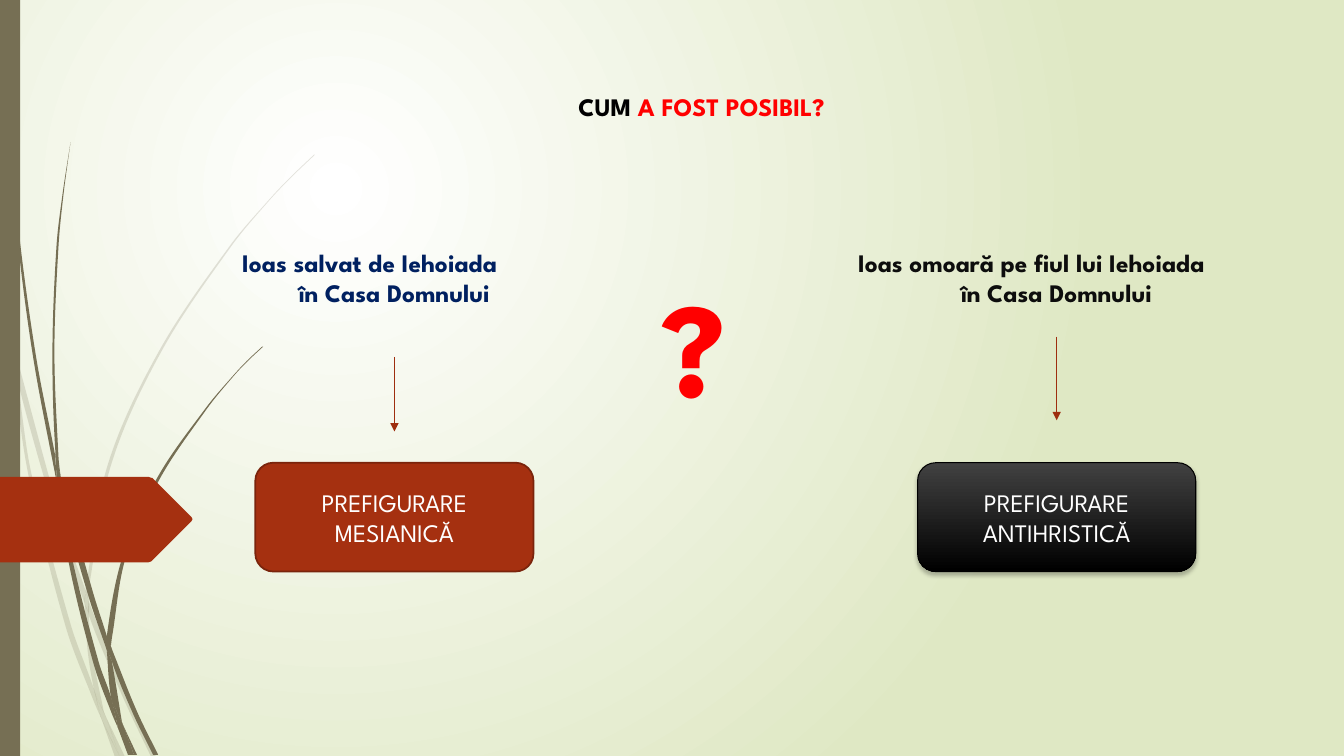
from dataclasses import dataclass
from math import dist
from lxml import etree
from pptx import Presentation
from pptx.dml.color import RGBColor
from pptx.enum.shapes import MSO_CONNECTOR, MSO_SHAPE
from pptx.enum.text import MSO_ANCHOR, MSO_AUTO_SIZE, PP_ALIGN
from pptx.oxml.ns import qn
from pptx.util import Inches, Pt


@dataclass(frozen=True)
class Theme:
    font: str = "League Spartan"
    text_size: int = 18
    mark_size: int = 96
    black: str = "000000"
    white: str = "FFFFFF"
    ink: str = "0D0D0D"
    navy: str = "002060"
    red: str = "FF0000"
    rust: str = "A53010"
    rust_edge: str = "7A240C"
    arrow: str = "9E2E0F"
    charcoal: str = "414141"
    olive: str = "766F54"
    meadow: str = "DFE8C4"


THEME = Theme()
CELL = Inches(0.1)  # the grid: one column or row is a tenth of an inch
COLUMNS, ROWS = 133.33, 75
BOX_SIZE = (27.6, 10.8)
BOX_TOP = 45.9
CENTRES = (39.13, 104.83)  # middle of the left and right halves

# Grass pieces: a downward and an upward edge each, in columns and rows
PALE_GRASS = [
    ([(0, 29.9), (1, 34.4), (1.1, 35)], [(0.9, 32.2), (0, 28.2)]),
    ([(1.4, 34.5), (1.7, 37.6), (5.8, 52.2), (8.4, 59.9)], [(8.5, 58.6), (6.2, 52), (1.4, 34.5)]),
    ([(8.8, 59.6), (8.8, 61), (12.3, 69.4), (15, 75.1)],
     [(15.5, 75.1), (12.7, 69.2), (9.2, 60.7), (8.8, 59.6)]),
    ([(10.5, 71.1), (11.9, 75.1)], [(12.4, 75.1), (10.5, 71.1)]),
    ([(1.1, 35), (2.8, 47), (6.5, 62.1), (9.2, 69.3), (10.1, 71.4)],
     [(9.9, 70.7), (9.3, 68.3), (7, 61.9), (3.1, 46.9), (1.7, 37.6), (1.1, 35)]),
    ([(8.4, 59.9), (8.7, 64.6), (9.3, 68.3), (9.6, 69.2), (10.5, 71.1)],
     [(10.3, 70.6), (9.1, 64.6), (8.8, 61), (8.8, 60.8), (8.4, 59.9)]),
    ([(31.2, 15.3), (28.9, 17.5), (26.8, 19.7), (22.8, 24.4), (15.8, 34.8), (10.7, 46.1),
      (8.5, 58.4), (8.5, 58.6), (8.8, 59.6)],
     [(8.8, 58.4), (11, 46.2), (16, 34.9), (22.9, 24.5), (26.8, 19.8), (29, 17.5), (31.2, 15.4)]),
    ([(10.1, 71.4), (11.4, 75.1)], [(11.9, 75.1), (10.1, 71.4)]),
    ([(8.5, 58.6), (8.4, 59.9), (8.8, 60.8)], [(8.8, 61), (8.8, 59.6), (8.5, 58.6)]),
    ([(9.3, 68.3), (9.9, 70.7), (10.1, 71.4), (11.9, 75.1)],
     [(11.9, 75.1), (10.5, 71.1), (9.6, 69.2), (9.3, 68.3)]),
]
DARK_GRASS = [
    ([(0.3, 0), (0.4, 4.8), (0.7, 11), (1.7, 23.3), (3.3, 35.5), (5.6, 47.7), (5.7, 48.1)],
     [(5.5, 45.7), (5.5, 45.3), (3.6, 35.5), (1.9, 23.2), (0.8, 10.9), (0.5, 4.8), (0.4, 0)]),
    ([(6, 47.2), (6.4, 50.5), (8.8, 59.2), (10.6, 64.5)],
     [(10.6, 63.3), (10.6, 63.1), (9.3, 59), (6, 47.2)]),
    ([(11, 64.1), (11.1, 65.6), (13.2, 70.8), (15.2, 74.9)],
     [(15.7, 74.9), (13.6, 70.6), (11.3, 64.9), (11, 64.1)]),
    ([(5.7, 47.7), (6.8, 55.7), (9.3, 65.9), (11.1, 70.8), (11.7, 72.2)],
     [(11.6, 71.7), (11, 69.1), (9.8, 65.7), (7.2, 55.6), (6.4, 50.5), (5.7, 47.7)]),
    ([(7, 14.1), (6.2, 19.3), (5.6, 24.5), (5.2, 34.9), (5.5, 44.9), (6, 47.2)],
     [(6, 47.2), (5.8, 45.3), (5.4, 34.9), (5.8, 24.5), (6.3, 19.3), (7, 14.1)]),
    ([(12.2, 71.9), (13.3, 74.9)], [(13.6, 74.9), (12.2, 71.9)]),
    ([(5.5, 44.9), (5.5, 45.3), (5.7, 47.7), (6.4, 50.5)], [(6, 47.2), (5.5, 44.9)]),
    ([(26, 34.4), (24.5, 35.8), (23.1, 37.3), (20.4, 40.5), (15.6, 47.4), (12.2, 55.1),
      (10.6, 63.1), (11, 64.1)],
     [(11.1, 63.3), (12.5, 55.2), (15.8, 47.6), (20.5, 40.6), (23.1, 37.4), (24.5, 35.9),
      (26.1, 34.4)]),
    ([(11.7, 72.2), (12.7, 74.9)], [(13.1, 74.9), (11.7, 72.2)]),
    ([(10.6, 64.5), (11, 69.1), (11.6, 70.6), (12.2, 71.9)],
     [(12.1, 71.6), (11.1, 65.6), (10.9, 65.1), (10.6, 64.5)]),
    ([(10.6, 63.1), (10.6, 64.5), (10.9, 65.1)], [(11.1, 65.6), (11, 64.1), (10.6, 63.1)]),
    ([(11, 69.1), (11.6, 71.7), (11.7, 72.2), (13, 74.9)],
     [(13.3, 74.9), (12.2, 71.9), (11.6, 70.6), (11, 69.1)]),
]
POINTER = [(0, 47.3), (14.7, 47.3), (15, 47.4), (15.1, 47.4), (19, 51.3), (19.1, 51.5),
           (19, 51.7), (15.1, 55.6), (15, 55.7), (14.7, 55.8), (0, 55.8)]


def cells(*values):
    return [round(value * CELL) for value in values]


def colour(name):
    return RGBColor.from_string(name)


def add_xml(parent, tag, **attributes):
    return etree.SubElement(parent, qn(tag), attributes)


def set_gradient(fill, start, end):
    fill.gradient()
    for stop, name in zip(fill.gradient_stops, (start, end)):
        stop.color.rgb = colour(name)


def handle(point, before, after, reach):
    """Control point lying from point along the direction before -> after."""
    length = dist(before, after) or 1
    return [round(p + (a - b) / length * reach) for p, b, a in zip(point, before, after)]


def bend(segment, before, start, end, after):
    """Turn a straight segment into a smooth cubic one."""
    reach = dist(start, end) / 3
    segment.tag = qn("a:cubicBezTo")
    controls = handle(start, before, end, reach), handle(end, after, start, reach)
    for index, (x, y) in enumerate(controls):
        segment.insert(index, etree.Element(qn("a:pt"), x=str(x), y=str(y)))


def add_outline(page, edges, fill, opacity=100):
    """Closed outline; each edge is a smooth run, joined to the next by a line."""
    corners = [cells(*point) for edge in edges for point in edge]
    builder = page.shapes.build_freeform(*corners[0])
    builder.add_line_segments(corners[1:], close=True)
    shape = builder.convert_to_shape()
    paint(shape, fill)
    segments = list(shape._element.iter(qn("a:moveTo"), qn("a:lnTo")))
    spots = [(int(part[0].get("x")), int(part[0].get("y"))) for part in segments]
    first = 0
    for edge in edges:
        last = first + len(edge) - 1
        for index in range(first + 1, last + 1):
            bend(segments[index], spots[max(index - 2, first)], spots[index - 1],
                 spots[index], spots[min(index + 1, last)])
        first = last + 1
    if opacity < 100:
        tint = shape._element.spPr.find(qn("a:solidFill"))[0]
        add_xml(tint, "a:alpha", val=str(opacity * 1000))


def paint(shape, fill):
    shape.shadow.inherit = False
    shape.fill.solid()
    shape.fill.fore_color.rgb = colour(fill)
    shape.line.fill.background()


def write(shape, paragraphs, size=THEME.text_size, bold=True):
    """Fill a shape; each paragraph is (alignment, [(text, colour), ...])."""
    frame = shape.text_frame
    frame.word_wrap = True
    for index, (alignment, spans) in enumerate(paragraphs):
        para = frame.add_paragraph() if index else frame.paragraphs[0]
        para.alignment = alignment
        for text, name in spans:
            span = para.add_run()
            span.text = text
            span.font.name = THEME.font
            span.font.size = Pt(size)
            span.font.bold = bold
            span.font.color.rgb = colour(name)


def add_text(page, place, paragraphs, size=THEME.text_size):
    box = page.shapes.add_textbox(*cells(*place))
    write(box, paragraphs, size)
    box.text_frame.auto_size = MSO_AUTO_SIZE.SHAPE_TO_FIT_TEXT


def add_arrow(page, column, top, bottom):
    arrow = page.shapes.add_connector(MSO_CONNECTOR.STRAIGHT, *cells(column, top, column, bottom))
    arrow.line.color.rgb = colour(THEME.arrow)
    arrow.line.width = Pt(0.75)
    properties = arrow._element.spPr
    add_xml(properties.find(qn("a:ln")), "a:tailEnd", type="triangle")
    add_xml(properties, "a:effectLst")


def add_box(page, centre, text, edge, edge_width):
    width, height = BOX_SIZE
    place = cells(centre - width / 2, BOX_TOP, width, height)
    box = page.shapes.add_shape(MSO_SHAPE.ROUNDED_RECTANGLE, *place)
    paint(box, THEME.rust)
    box.line.color.rgb = colour(edge)
    box.line.width = Pt(edge_width)
    box.text_frame.vertical_anchor = MSO_ANCHOR.MIDDLE
    write(box, [(PP_ALIGN.CENTER, [(text, THEME.white)])], bold=False)
    return box


def darken(box):
    set_gradient(box.fill, THEME.charcoal, THEME.black)
    box.fill.gradient_angle = 270
    effects = box._element.spPr.find(qn("a:effectLst"))
    shadow = add_xml(effects, "a:outerShdw", blurRad=str(Pt(3)), dist=str(Pt(2)), dir="5400000")
    add_xml(add_xml(shadow, "a:srgbClr", val=THEME.black), "a:alpha", val="25000")


def add_backdrop(page):
    set_gradient(page.background.fill, THEME.white, THEME.meadow)
    gradient = page._element.find(".//" + qn("a:gradFill"))
    gradient.remove(gradient.find(qn("a:lin")))
    glow = add_xml(gradient, "a:path", path="circle")
    add_xml(glow, "a:fillToRect", l="50000", t="50000", r="100000", b="100000")
    for grass, opacity in ((PALE_GRASS, 20), (DARK_GRASS, 100)):
        for edges in grass:
            add_outline(page, edges, THEME.olive, opacity)
    paint(page.shapes.add_shape(MSO_SHAPE.RECTANGLE, *cells(0, 0, 2, ROWS)), THEME.olive)
    add_outline(page, [[point] for point in POINTER], THEME.rust)


def main():
    deck = Presentation()
    deck.slide_width, deck.slide_height = cells(COLUMNS, ROWS)
    page = deck.slides.add_slide(deck.slide_layouts[5])
    add_backdrop(page)

    # Title
    title = page.shapes.title
    title.left, title.top, title.width, title.height = cells(37.83, 8.6, 64.2, 4)
    title.text_frame.vertical_anchor = MSO_ANCHOR.TOP
    title.text_frame.auto_size = MSO_AUTO_SIZE.NONE
    write(title, [(PP_ALIGN.CENTER, [("CUM ", THEME.black), ("A FOST POSIBIL? ", THEME.red)])])

    # The two halves: statement, arrow, verdict
    halves = zip(
        CENTRES,
        ((" Ioas salvat de Iehoiada", 33.5, THEME.navy),
         (" Ioas omoară pe fiul lui Iehoiada", 42.7, THEME.ink)),
        ((35.4, 42.8), (33.4, 41.7)),
        (("PREFIGURARE MESIANICĂ", THEME.rust_edge, 1.25),
         ("PREFIGURARE ANTIHRISTICĂ", THEME.black, 0.75)))
    for centre, (statement, width, ink), arrow_rows, verdict in halves:
        add_text(page, (centre - width / 2, 24, width, 7.1),
                 [(PP_ALIGN.LEFT, [(statement, ink)]),
                  (PP_ALIGN.CENTER, [("în Casa Domnului", ink)])])
        add_arrow(page, centre, *arrow_rows)
        box = add_box(page, centre, *verdict)
    darken(box)  # the right-hand verdict

    # Question mark between the halves
    add_text(page, (64, 25.6, 9.6, 17.2),
             [(PP_ALIGN.CENTER, [("?", THEME.red)])], THEME.mark_size)
    deck.save("out.pptx")


if __name__ == "__main__":
    main()
